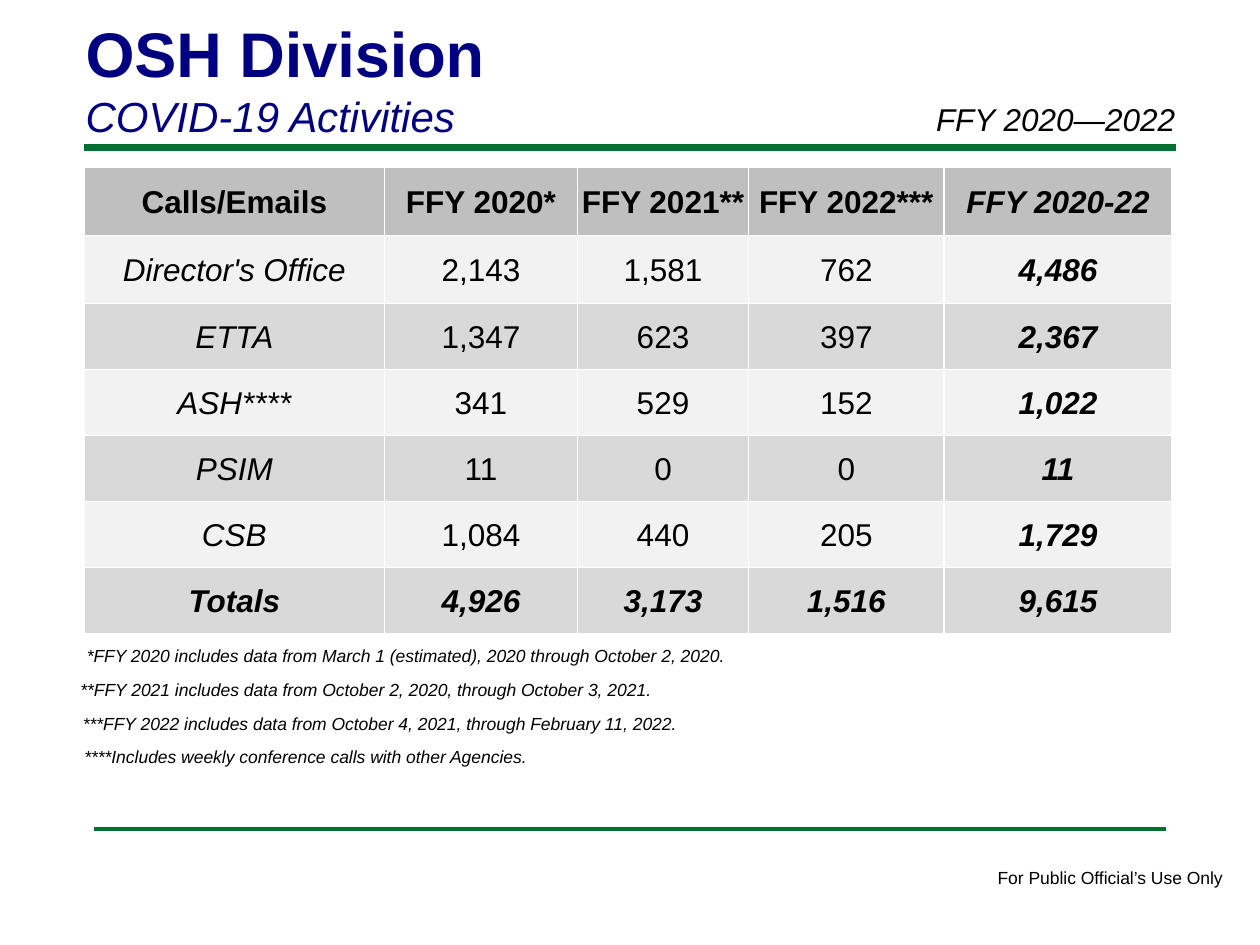
"""Build the OSH Division slide on COVID-19 calls and emails."""
from lxml import etree
from pptx import Presentation
from pptx.dml.color import RGBColor
from pptx.enum.shapes import MSO_CONNECTOR
from pptx.enum.text import MSO_ANCHOR, PP_ALIGN
from pptx.oxml.ns import qn
from pptx.util import Cm, Pt

STRAIGHT = MSO_CONNECTOR.STRAIGHT
MIDDLE, BOTTOM = MSO_ANCHOR.MIDDLE, MSO_ANCHOR.BOTTOM
LEFT, CENTER = PP_ALIGN.LEFT, PP_ALIGN.CENTER
COLORS = {
    "text": "000000", "title": "000080", "rule": "007030", "border": "FFFFFF",
    "header": "BFBFBF", "light": "F2F2F2", "dark": "D9D9D9",
}


def format_runs(paragraph, size, color="text", bold=False, italic=False):
    for run in paragraph.runs:
        run.font.name = "Arial"
        run.font.size = Pt(size)
        run.font.bold = bold
        run.font.italic = italic
        run.font.color.rgb = RGBColor.from_string(COLORS[color])


def add_text(slide, text, left, top, width, height, size, italic=True, wrap=True):
    text_frame = slide.shapes.add_textbox(Cm(left), Cm(top), Cm(width), Cm(height)).text_frame
    text_frame.word_wrap = wrap
    text_frame.text = text
    format_runs(text_frame.paragraphs[0], size, italic=italic)


presentation = Presentation()
presentation.slide_width, presentation.slide_height = Cm(25.4), Cm(19.05)
slide = presentation.slides.add_slide(presentation.slide_layouts[5])

title = slide.shapes.title
title.left, title.top, title.width, title.height = Cm(1.47), Cm(0.15), Cm(20.96), Cm(2.82)
title.text_frame.text = "OSH Division\nCOVID-19 Activities"
title.text_frame.vertical_anchor = BOTTOM
heading, subheading = title.text_frame.paragraphs
heading.alignment = subheading.alignment = LEFT
format_runs(heading, 36, "title", bold=True)
format_runs(subheading, 24, "title", italic=True)

for left, right, y, weight in [(1.7, 23.7, 2.97, 4), (1.9, 23.5, 16.71, 2)]:
    rule = slide.shapes.add_connector(STRAIGHT, Cm(left), Cm(y), Cm(right), Cm(y))
    rule.line.color.rgb = RGBColor.from_string(COLORS["rule"])
    rule.line.width = Pt(weight)
    etree.SubElement(rule._element.spPr, qn("a:effectLst"))

add_text(slide, "FFY 2020—2022", 18.62, 1.9, 6.35, 1.02, 18)
add_text(slide, "For Public Official’s Use Only", 19.86, 17.35, 5.11, 0.69, 10, italic=False, wrap=False)

rows = [
    ["Calls/Emails", "FFY 2020*", "FFY 2021**", "FFY 2022***", "FFY 2020-22"],
    ["Director's Office", "2,143", "1,581", "762", "4,486"],
    ["ETTA", "1,347", "623", "397", "2,367"],
    ["ASH****", "341", "529", "152", "1,022"],
    ["PSIM", "11", "0", "0", "11"],
    ["CSB", "1,084", "440", "205", "1,729"],
    ["Totals", "4,926", "3,173", "1,516", "9,615"],
]
column_widths = [6.05, 3.89, 3.45, 3.94, 4.6]
row_heights = [1.37] * 2 + [1.33] * 5
last_row, last_column = len(rows) - 1, len(column_widths) - 1
table = slide.shapes.add_table(
    len(rows), len(column_widths), Cm(1.7), Cm(3.38),
    Cm(sum(column_widths)), Cm(sum(row_heights)),
).table
for column, width in zip(table.columns, column_widths):
    column.width = Cm(width)

for row_index, values in enumerate(rows):
    table.rows[row_index].height = Cm(row_heights[row_index])
    fill = "header" if row_index == 0 else "light" if row_index % 2 else "dark"
    for column_index, value in enumerate(values):
        cell = table.cell(row_index, column_index)
        cell.text = value
        cell.vertical_anchor = MIDDLE
        cell.margin_left = cell.margin_right = cell.margin_top = Cm(0.03)
        cell.margin_bottom = 0
        paragraph = cell.text_frame.paragraphs[0]
        paragraph.alignment = CENTER
        is_total = row_index == last_row or column_index == last_column
        is_label = row_index > 0 and column_index == 0
        format_runs(paragraph, 18, bold=is_total or row_index == 0, italic=is_total or is_label)
        properties = cell._tc.get_or_add_tcPr()
        for side in ("a:lnL", "a:lnR", "a:lnT", "a:lnB"):
            border = etree.SubElement(properties, qn(side), w=str(Pt(1)))
            solid_fill = etree.SubElement(border, qn("a:solidFill"))
            etree.SubElement(solid_fill, qn("a:srgbClr"), val=COLORS["border"])
        cell.fill.solid()
        cell.fill.fore_color.rgb = RGBColor.from_string(COLORS[fill])

footnotes = [
    (1.5, 22.17, "*FFY 2020 includes data from March 1 (estimated), 2020 through October 2, 2020."),
    (1.37, 22.17, "**FFY 2021 includes data from October 2, 2020, through October 3, 2021."),
    (1.42, 22.17, "***FFY 2022 includes data from October 4, 2021, through February 11, 2022."),
    (1.45, 9.58, "****Includes weekly conference calls with other Agencies."),
]
for index, (left, width, footnote) in enumerate(footnotes):
    add_text(slide, footnote, left, 12.88 + 0.68 * index, width, 0.69, 10)

presentation.save("out.pptx")
